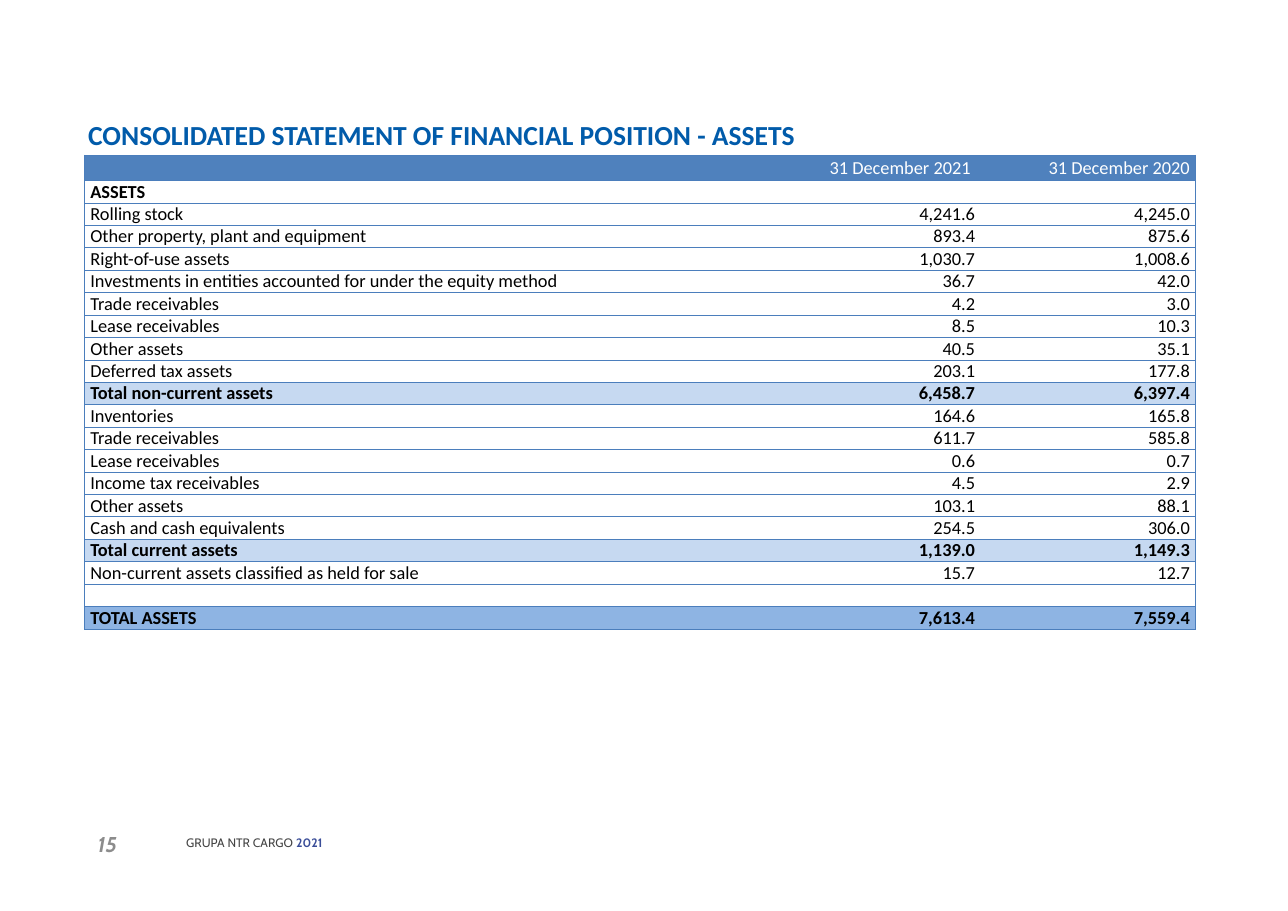
from lxml.etree import SubElement
from pptx import Presentation
from pptx.dml.color import RGBColor
from pptx.enum.text import MSO_ANCHOR, MSO_AUTO_SIZE, PP_ALIGN
from pptx.oxml.ns import qn
from pptx.util import Inches, Pt

TITLE_BLUE = RGBColor(0x01, 0x5B, 0xAA)
HEADER_BLUE = RGBColor(0x4F, 0x81, 0xBD)
RULE_BLUE = RGBColor(0x4B, 0x7E, 0xBC)
SUBTOTAL_BLUE = RGBColor(0xC6, 0xD9, 0xF1)
TOTAL_BLUE = RGBColor(0x8E, 0xB4, 0xE3)
YEAR_BLUE = RGBColor(0x3A, 0x4D, 0x98)
FOOTER_GREY = RGBColor(0x45, 0x45, 0x45)
NUMBER_GREY = RGBColor(0x8C, 0x8C, 0x8C)
WHITE = RGBColor(0xFF, 0xFF, 0xFF)
BLACK = RGBColor(0, 0, 0)

COLUMN_WIDTHS = (6.18, 1.95, 1.95)
HEADER_HEIGHT = 0.23
ROW_HEIGHT = 0.2

STATEMENT = [
    ("", "31 December 2021 ", "31 December 2020"),
    ("ASSETS", "", ""),
    ("Rolling stock", "4,241.6", "4,245.0"),
    ("Other property, plant and equipment", "893.4", "875.6"),
    ("Right-of-use assets", "1,030.7", "1,008.6"),
    ("Investments in entities accounted for under the equity method", "36.7", "42.0"),
    ("Trade receivables", "4.2", "3.0"),
    ("Lease receivables", "8.5", "10.3"),
    ("Other assets", "40.5", "35.1"),
    ("Deferred tax assets", "203.1", "177.8"),
    ("Total non-current assets", "6,458.7", "6,397.4"),
    ("Inventories", "164.6", "165.8"),
    ("Trade receivables", "611.7", "585.8"),
    ("Lease receivables", "0.6", "0.7"),
    ("Income tax receivables", "4.5", "2.9"),
    ("Other assets", "103.1", "88.1"),
    ("Cash and cash equivalents", "254.5", "306.0"),
    ("Total current assets", "1,139.0", "1,149.3"),
    ("Non-current assets classified as held for sale", "15.7", "12.7"),
    ("", "", ""),
    ("TOTAL ASSETS", "7,613.4", "7,559.4"),
]
# label: (fill, text colour, bold)
ROW_STYLES = {
    "ASSETS": (WHITE, BLACK, True),
    "Total non-current assets": (SUBTOTAL_BLUE, BLACK, True),
    "Total current assets": (SUBTOTAL_BLUE, BLACK, True),
    "TOTAL ASSETS": (TOTAL_BLUE, BLACK, True),
}


def write(paragraph, text, size=12, font="Calibri", color=BLACK, bold=False,
          italic=False, align=PP_ALIGN.LEFT):
    """Append one formatted run to the paragraph."""
    paragraph.alignment = align
    paragraph.font.size = Pt(size)
    if text:
        run = paragraph.add_run()
        run.text = text
        run.font.size = Pt(size)
        run.font.name = font
        run.font.color.rgb = color
        run.font.bold = bold
        run.font.italic = italic


def prepare_frame(frame, insets=(0.1, 0.05, 0.1, 0.05), anchor=MSO_ANCHOR.MIDDLE):
    """Set insets (left, top, right, bottom) and return the first paragraph."""
    frame.word_wrap = True
    frame.auto_size = MSO_AUTO_SIZE.NONE
    (frame.margin_left, frame.margin_top,
     frame.margin_right, frame.margin_bottom) = map(Inches, insets)
    frame.vertical_anchor = anchor
    return frame.paragraphs[0]


def add_text_box(slide, left, top, width, height, **frame_format):
    box = slide.shapes.add_textbox(
        Inches(left), Inches(top), Inches(width), Inches(height))
    return prepare_frame(box.text_frame, **frame_format)


def set_borders(cell, sides):
    """Rule the given sides (of L, R, T, B) and clear the others."""
    properties = cell._tc.get_or_add_tcPr()
    for side in "LRTB":
        line = SubElement(properties, qn(f"a:ln{side}"), w=str(int(Pt(0.75))))
        if side in sides:
            fill = SubElement(line, qn("a:solidFill"))
            SubElement(fill, qn("a:srgbClr"), val=str(RULE_BLUE))
        else:
            SubElement(line, qn("a:noFill"))


def add_title(slide, left, top, width, height):
    title = slide.shapes.title
    title.left, title.top = Inches(left), Inches(top)
    title.width, title.height = Inches(width), Inches(height)
    write(prepare_frame(title.text_frame),
          "CONSOLIDATED STATEMENT OF FINANCIAL POSITION - ASSETS",
          size=18, color=TITLE_BLUE, bold=True)


def add_statement(slide, left, top):
    height = HEADER_HEIGHT + ROW_HEIGHT * (len(STATEMENT) - 1)
    table = slide.shapes.add_table(
        len(STATEMENT), len(COLUMN_WIDTHS), Inches(left), Inches(top),
        Inches(sum(COLUMN_WIDTHS)), Inches(height)).table
    for column, width in zip(table.columns, COLUMN_WIDTHS):
        column.width = Inches(width)

    for r, entries in enumerate(STATEMENT):
        table.rows[r].height = Inches(ROW_HEIGHT if r else HEADER_HEIGHT)
        fill, color, bold = ROW_STYLES.get(entries[0], (WHITE, BLACK, False))
        if r == 0:
            fill, color = HEADER_BLUE, WHITE
        for c, text in enumerate(entries):
            cell = table.cell(r, c)
            cell.margin_left = cell.margin_right = Inches(0.05)
            cell.margin_top = cell.margin_bottom = 0
            cell.vertical_anchor = MSO_ANCHOR.MIDDLE
            set_borders(cell, "TB" + {0: "L", 2: "R"}.get(c, ""))
            cell.fill.solid()
            cell.fill.fore_color.rgb = fill
            write(cell.text_frame.paragraphs[0], text, color=color, bold=bold,
                  align=PP_ALIGN.RIGHT if c else PP_ALIGN.LEFT)


def add_footer(slide, left, top):
    number = add_text_box(slide, left, top, 0.46, 0.52)
    write(number, "15", size=14, font="Cabin", color=NUMBER_GREY,
          bold=True, italic=True, align=PP_ALIGN.RIGHT)
    group = add_text_box(slide, left + 0.98, top + 0.17, 1.41, 0.15,
                         insets=(0.01, 0.01, 0, 0), anchor=MSO_ANCHOR.TOP)
    write(group, "GRUPA NTR CARGO ", size=8, font="Cabin", color=FOOTER_GREY)
    write(group, "2021", size=8, font="Cabin", color=YEAR_BLUE, bold=True)


def main():
    presentation = Presentation()
    presentation.slide_width = Inches(11.69)
    presentation.slide_height = Inches(8.27)
    slide = presentation.slides.add_slide(presentation.slide_layouts[5])
    add_title(slide, 0.7, 1.02, 10.22, 0.4)
    add_statement(slide, 0.77, 1.41)
    add_footer(slide, 0.7, 7.4)
    presentation.save("out.pptx")


if __name__ == "__main__":
    main()
